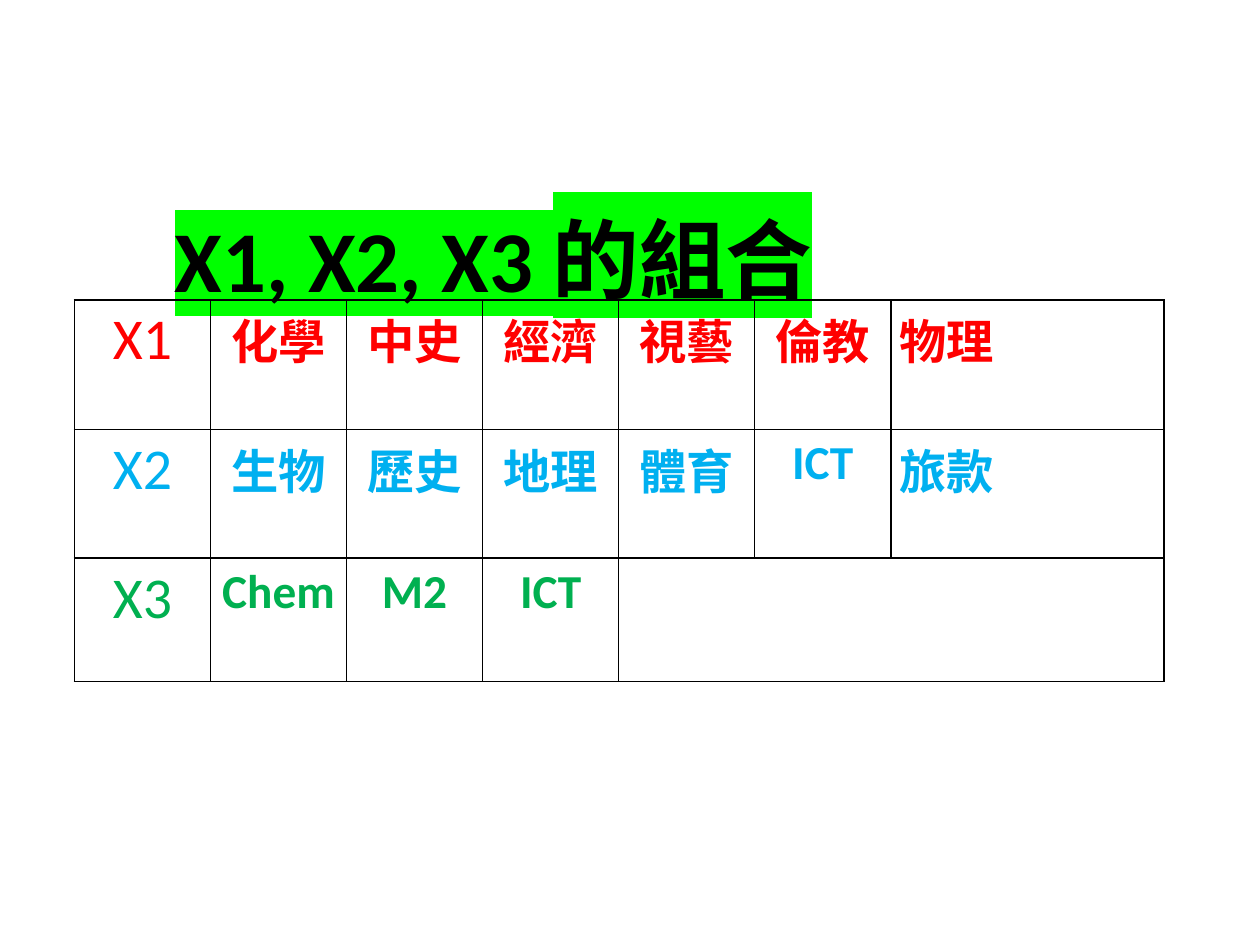
from lxml.etree import SubElement
from pptx import Presentation
from pptx.dml.color import RGBColor as RGB
from pptx.enum.text import MSO_ANCHOR as ANCHOR, PP_ALIGN as ALIGN
from pptx.oxml.ns import qn
from pptx.util import Inches, Pt

COLORS = {"black": "000000", "lime": "00FF00", "red": "FF0000",
          "blue": "00B0F0", "green": "00B050"}
ROWS = [
    ("red", ["X1", "化學", "中史", "經濟", "視藝", "倫教", "物理"]),
    ("blue", ["X2", "生物", "歷史", "地理", "體育", "ICT", "旅款"]),
    ("green", ["X3", "Chem", "M2", "ICT"]),
]
COL_WIDTHS = [1.08] * 6 + [2.17]
ROW_HEIGHTS = [1.03, 1.02, 0.98]


class Deck:
    font = "Calibri"

    def __init__(self, prs):
        self.s = prs.slides.add_slide(prs.slide_layouts[6])

    def style(self, r, size, color, bold):
        r.font.name = self.font
        r.font.size = Pt(size)
        r.font.bold = bold
        r.font.color.rgb = RGB.from_string(COLORS[color])

    def title(self, text, x, y, w, h):
        sp = self.s.shapes.add_textbox(*map(Inches, (x, y, w, h)))
        tf = sp.text_frame
        tf.word_wrap = True
        tf.vertical_anchor = ANCHOR.BOTTOM
        tf.margin_top = tf.margin_bottom = 0
        tf.text = text
        r = tf.paragraphs[0].runs[0]
        self.style(r, 49.5, "black", True)
        rPr = r.font._element
        highlight = SubElement(rPr, qn("a:highlight"))
        SubElement(highlight, qn("a:srgbClr"), val=COLORS["lime"])
        rPr.find(qn("a:solidFill")).addnext(highlight)

    def borders(self, cell):
        tcPr = cell._tc.get_or_add_tcPr()
        for i, side in enumerate(("lnL", "lnR", "lnT", "lnB")):
            ln = SubElement(tcPr, qn(f"a:{side}"), w=str(Pt(1)))
            fill = SubElement(ln, qn("a:solidFill"))
            SubElement(fill, qn("a:srgbClr"), val=COLORS["black"])
            tcPr.insert(i, ln)

    def table(self, rows, x, y, widths, heights):
        size = (x, y, sum(widths), sum(heights))
        table = self.s.shapes.add_table(len(heights), len(widths), *map(Inches, size)).table
        table.first_row = table.horz_banding = False
        for col, w in zip(table.columns, widths):
            col.width = Inches(w)
        for row, h in zip(table.rows, heights):
            row.height = Inches(h)
        for cell in table.iter_cells():
            cell.fill.background()
            cell.margin_left = cell.margin_right = Inches(0.07)
            cell.margin_top = cell.margin_bottom = Inches(0.04)
            self.borders(cell)
        last = len(widths) - 1
        for i, (color, texts) in enumerate(rows):
            for j, text in enumerate(texts):
                cell = table.cell(i, j)
                cell.text = text
                p = cell.text_frame.paragraphs[0]
                p.alignment = ALIGN.LEFT if j == last else ALIGN.CENTER
                self.style(p.runs[0], 27 if j else 33, color, j > 0)
            if len(texts) <= last:
                table.cell(i, len(texts)).merge(table.cell(i, last))


def main():
    prs = Presentation()
    prs.slide_width, prs.slide_height = Inches(10), Inches(7.5)
    deck = Deck(prs)
    deck.title("X1, X2, X3 的組合", 1.29, 1.53, 8.53, 0.93)
    deck.table(ROWS, 0.59, 2.38, COL_WIDTHS, ROW_HEIGHTS)
    prs.save("out.pptx")


if __name__ == "__main__":
    main()
